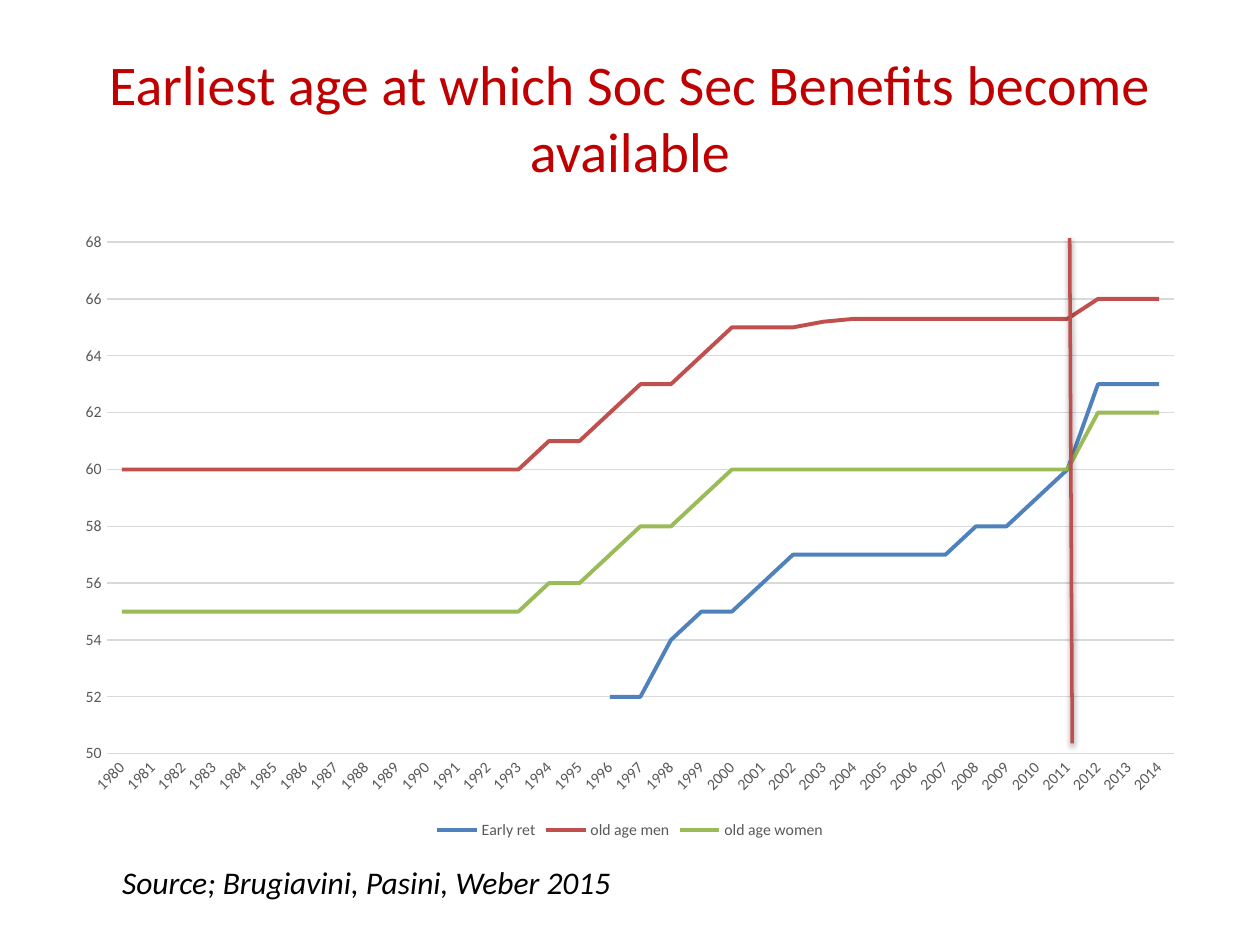
from dataclasses import dataclass

from lxml.etree import SubElement
from pptx import Presentation
from pptx.chart.data import CategoryChartData
from pptx.dml.color import RGBColor
from pptx.enum.chart import XL_CHART_TYPE, XL_LEGEND_POSITION, XL_TICK_MARK
from pptx.enum.shapes import MSO_CONNECTOR
from pptx.enum.text import MSO_ANCHOR, MSO_AUTO_SIZE, PP_ALIGN
from pptx.oxml.ns import qn
from pptx.util import Inches, Pt


@dataclass(frozen=True)
class Theme:
    font: str = "Calibri"
    title: str = "C00000"
    ink: str = "000000"
    label: str = "595959"
    grid: str = "D9D9D9"
    mark: str = "C0504D"
    title_size: int = 32
    note_size: int = 18
    chart_size: int = 10
    label_size: int = 9


@dataclass(frozen=True)
class Series:
    name: str
    color: str
    spans: tuple  # (age, number of years it holds)

    def ages(self) -> list:
        return [age for age, years in self.spans for _ in range(years)]


@dataclass(frozen=True)
class Label:
    text: str
    box: tuple
    size: int
    color: str
    align: PP_ALIGN = PP_ALIGN.LEFT
    anchor: MSO_ANCHOR = MSO_ANCHOR.TOP
    italic: bool = False
    wrap: bool = True


THEME = Theme()
YEARS = range(1980, 2015)
SERIES = (
    Series("Early ret", "4F81BD", (
        (None, 16), (52, 2), (54, 1), (55, 2), (56, 1), (57, 6),
        (58, 2), (59, 1), (60, 1), (63, 3))),
    Series("old age men", "C0504D", (
        (60, 14), (61, 2), (62, 1), (63, 2), (64, 1), (65, 3),
        (65.2, 1), (65.3, 8), (66, 3))),
    Series("old age women", "9BBB59", (
        (55, 14), (56, 2), (57, 1), (58, 2), (59, 1), (60, 12), (62, 3))),
)
LABELS = (
    Label("Earliest age at which Soc Sec Benefits become available",
          (0.5, 0.3, 9, 1.25), THEME.title_size, THEME.title,
          align=PP_ALIGN.CENTER, anchor=MSO_ANCHOR.MIDDLE),
    Label("Source; Brugiavini, Pasini, Weber 2015", (0.87, 6.8, 4.12, 0.4),
          THEME.note_size, THEME.ink, italic=True, wrap=False),
)


def style(font, size: int, color: str) -> None:
    font.name = THEME.font
    font.size = Pt(size)
    font.color.rgb = RGBColor.from_string(color)


def stroke(line, color: str, width: float) -> None:
    line.color.rgb = RGBColor.from_string(color)
    line.width = Pt(width)


def add_label(slide, label: Label) -> None:
    frame = slide.shapes.add_textbox(*map(Inches, label.box)).text_frame
    frame.word_wrap = label.wrap
    frame.vertical_anchor = label.anchor
    if not label.wrap:
        frame.auto_size = MSO_AUTO_SIZE.SHAPE_TO_FIT_TEXT
    para = frame.paragraphs[0]
    para.text = label.text
    para.alignment = label.align
    style(para.font, label.size, label.color)
    para.font.italic = label.italic


def add_ages(slide) -> None:
    data = CategoryChartData()
    data.categories = [str(year) for year in YEARS]
    for item in SERIES:
        data.add_series(item.name, item.ages())
    box = map(Inches, (0.5, 1.75, 9, 4.95))
    chart = slide.shapes.add_chart(XL_CHART_TYPE.LINE, *box, data).chart
    chart.has_title = False
    style(chart.font, THEME.chart_size, THEME.ink)

    # Lines
    plot = chart.plots[0]
    plot.vary_by_categories = False
    for line, item in zip(plot.series, SERIES):
        line.smooth = False
        stroke(line.format.line, item.color, 2.25)

    # Axes
    for axis in (chart.category_axis, chart.value_axis):
        axis.major_tick_mark = axis.minor_tick_mark = XL_TICK_MARK.NONE
        style(axis.tick_labels.font, THEME.label_size, THEME.label)
    stroke(chart.category_axis.format.line, THEME.grid, 0.75)
    scale = chart.value_axis
    scale.minimum_scale, scale.maximum_scale = 50, 68
    scale.major_unit = 2
    scale.format.line.fill.background()
    stroke(scale.major_gridlines.format.line, THEME.grid, 0.75)

    # Legend
    chart.has_legend = True
    chart.legend.position = XL_LEGEND_POSITION.BOTTOM
    chart.legend.include_in_layout = False
    style(chart.legend.font, THEME.label_size, THEME.label)


def add_mark(slide) -> None:
    ends = map(Inches, (8.51, 5.9, 8.49, 1.89))
    mark = slide.shapes.add_connector(MSO_CONNECTOR.STRAIGHT, *ends)
    stroke(mark.line, THEME.mark, 2)
    # Soft shadow straight below
    effects = SubElement(mark._element.spPr, qn("a:effectLst"))
    shadow = SubElement(effects, qn("a:outerShdw"), blurRad=str(Pt(3.1)),
                        dist=str(Pt(1.6)), dir="5400000", rotWithShape="0")
    color = SubElement(shadow, qn("a:srgbClr"), val=THEME.ink)
    SubElement(color, qn("a:alpha"), val="38000")


def main() -> None:
    deck = Presentation()
    deck.slide_width, deck.slide_height = Inches(10), Inches(7.5)
    slide = deck.slides.add_slide(deck.slide_layouts[6])
    title, source = LABELS
    add_label(slide, title)
    add_ages(slide)
    add_mark(slide)
    add_label(slide, source)
    deck.save("out.pptx")


if __name__ == "__main__":
    main()
